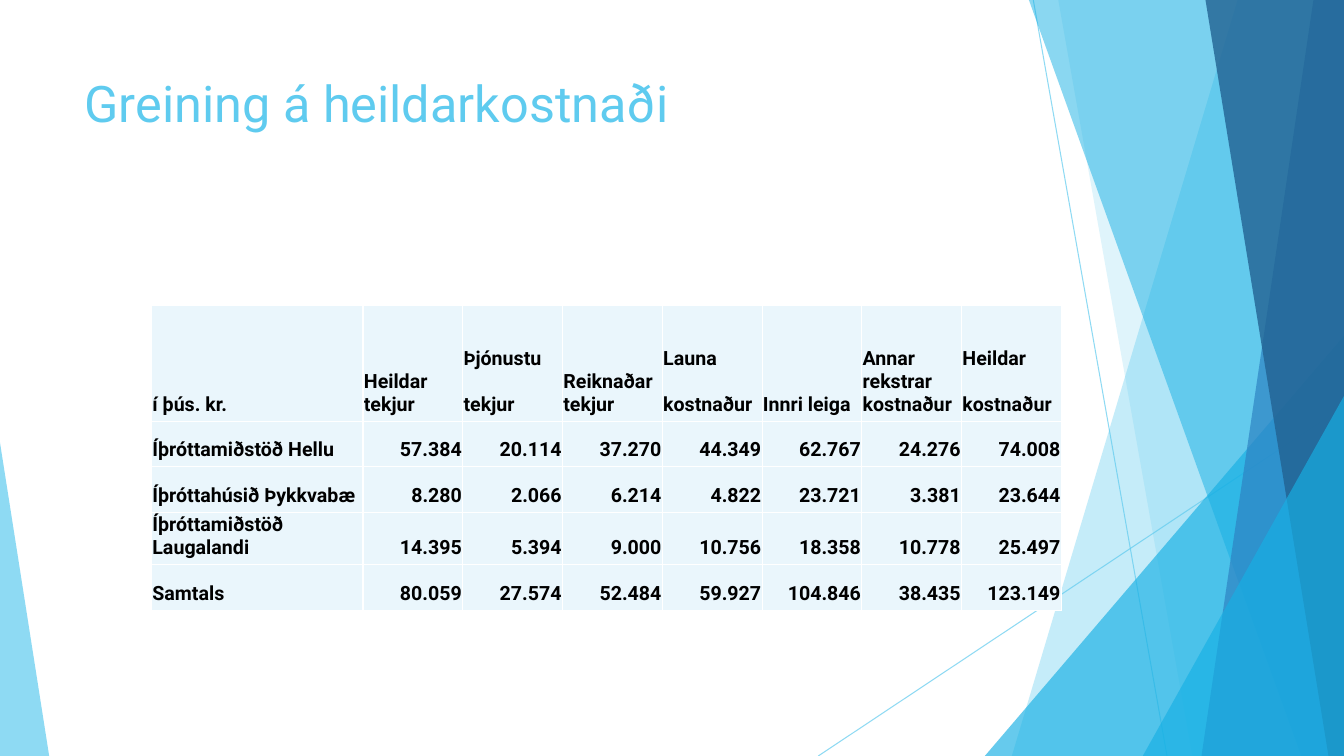
from collections import namedtuple
from dataclasses import dataclass

from pptx import Presentation
from pptx import oxml
from pptx import util as u
from pptx.dml.color import RGBColor
from pptx.enum import shapes, text
from pptx.oxml import ns

Cm, Pt = u.Cm, u.Pt
Box = namedtuple("Box", "left top width height")


@dataclass(frozen=True)
class Theme:
    font: str = "Roboto"
    sky: str = "5FCBEF"
    cyan: str = "17B0E4"
    blue: str = "2E83C3"
    navy: str = "226292"
    cell: str = "EAF6FC"
    border: str = "FFFFFF"
    ink: str = "000000"
    title_size: int = 36
    table_size: int = 14
    skipped_line: float = 16.4


THEME = Theme()

HEADINGS = ["í þús. kr.", "Heildar tekjur", "Þjónustu\ntekjur", "Reiknaðar tekjur",
            "Launa\nkostnaður", "Innri leiga", "Annar rekstrar kostnaður",
            "Heildar\nkostnaður"]
FACILITIES = [
    ["Íþróttamiðstöð Hellu", "57.384", "20.114", "37.270", "44.349", "62.767", "24.276", "74.008"],
    ["Íþróttahúsið Þykkvabæ", "8.280", "2.066", "6.214", "4.822", "23.721", "3.381", "23.644"],
    ["Íþróttamiðstöð Laugalandi", "14.395", "5.394", "9.000", "10.756", "18.358", "10.778", "25.497"],
    ["Samtals", "80.059", "27.574", "52.484", "59.927", "104.846", "38.435", "123.149"],
]


def element(tag, **attributes):
    made = oxml.parse_xml(f"<{tag} {ns.nsdecls('a')}/>")
    for name, value in attributes.items():
        made.set(name, str(value))
    return made


def set_opacity(drawn, percent):
    for colour in drawn._element.spPr.xpath(".//a:srgbClr"):
        colour.append(element("a:alpha", val=percent * 1000))


def paint(facet, colour, percent):
    facet.shadow.inherit = False
    facet.fill.solid()
    facet.fill.fore_color.rgb = RGBColor.from_string(colour)
    facet.line.fill.background()
    set_opacity(facet, percent)


def add_run(paragraph, words, size, colour, bold=False):
    run = paragraph.add_run()
    run.text = words
    run.font.name = THEME.font
    run.font.size = Pt(size)
    run.font.bold = bold
    run.font.color.rgb = RGBColor.from_string(colour)


def add_thin_line(slide, start, end):
    line = slide.shapes.add_connector(shapes.MSO_CONNECTOR.STRAIGHT, *start, *end)
    line.line.width = Pt(0.75)
    line.line.color.rgb = RGBColor.from_string(THEME.sky)
    set_opacity(line, 70)
    line._element.spPr.append(element("a:effectLst"))


def add_panel(slide, box, top_inset, bottom_inset):
    """Outline a full-height panel whose left edge slants; insets count from the right."""
    right, bottom = box.left + box.width, box.top + box.height
    builder = slide.shapes.build_freeform(right - Cm(top_inset), box.top)
    builder.add_line_segments([(right, box.top), (right, bottom),
                               (right - Cm(bottom_inset), bottom)])
    return builder.convert_to_shape()


def add_corner(slide, box, width, height, apex):
    """Add a right triangle in the bottom corner; apex 0 is left and 1 is right."""
    left = box.left + apex * (box.width - Cm(width))
    corner = slide.shapes.add_shape(shapes.MSO_SHAPE.ISOSCELES_TRIANGLE, left,
                                    box.top + box.height - Cm(height), Cm(width), Cm(height))
    corner.adjustments[0] = apex
    return corner


def add_facets(slide, box):
    right, bottom = box.left + box.width, box.top + box.height
    add_thin_line(slide, (right - Cm(7.83), box.top), (right - Cm(4.46), bottom))
    add_thin_line(slide, (right, box.top + Cm(10.24)), (right - Cm(13.25), bottom))
    for add_facet, measures, colour, percent in [
        (add_panel, (2.68, 8.37), THEME.sky, 36),
        (add_panel, (7.2, 3.82), THEME.sky, 20),
        (add_corner, (9.05, 10.59, 1), THEME.cyan, 66),
        (add_panel, (7.94, 1.08), THEME.cyan, 50),
        (add_panel, (0.77, 3.59), THEME.blue, 70),
        (add_panel, (3.49, 0.39), THEME.navy, 80),
        (add_corner, (5.07, 9.07, 1), THEME.cyan, 66),
        (add_corner, (1.24, 7.9, 0), THEME.sky, 70),
    ]:
        paint(add_facet(slide, box, *measures), colour, percent)


def place_title(slide, box, words):
    title = slide.shapes.title
    title.left, title.top, title.width, title.height = box
    title.text_frame.word_wrap = True
    title.text_frame.vertical_anchor = text.MSO_ANCHOR.TOP
    heading = title.text_frame.paragraphs[0]
    heading.alignment = text.PP_ALIGN.LEFT
    add_run(heading, words, THEME.title_size, THEME.sky)


def add_borders(cell):
    properties = cell._tc.get_or_add_tcPr()
    for side in ("a:lnL", "a:lnR", "a:lnT", "a:lnB"):
        border = element(side, w=Pt(1))
        fill = element("a:solidFill")
        fill.append(element("a:srgbClr", val=THEME.border))
        border.append(fill)
        properties.append(border)


def fill_cell(cell, words, alignment):
    """Write a cell; a line break in the words leaves one line's gap."""
    add_borders(cell)
    cell.fill.solid()
    cell.fill.fore_color.rgb = RGBColor.from_string(THEME.cell)
    cell.vertical_anchor = text.MSO_ANCHOR.BOTTOM
    cell.margin_left = cell.margin_right = cell.margin_top = Cm(0.02)
    cell.margin_bottom = Cm(0.13)
    for index, part in enumerate(words.split("\n")):
        frame = cell.text_frame
        paragraph = frame.add_paragraph() if index else frame.paragraphs[0]
        paragraph.alignment = alignment
        if index:
            paragraph.space_before = Pt(THEME.skipped_line)
        add_run(paragraph, part, THEME.table_size, THEME.ink, bold=True)


def add_cost_table(slide, box):
    rows = [HEADINGS] + FACILITIES
    costs = slide.shapes.add_table(len(rows), len(HEADINGS), *box).table
    costs.first_row = costs.horz_banding = False
    name_width, header_height = Cm(5.33), Cm(2.92)
    for index, column in enumerate(costs.columns):
        column.width = (box.width - name_width) // (len(HEADINGS) - 1) if index else name_width
    for index, row in enumerate(costs.rows):
        row.height = (box.height - header_height) // len(FACILITIES) if index else header_height
    for row_index, row in enumerate(rows):
        for column_index, words in enumerate(row):
            is_amount = row_index and column_index
            alignment = text.PP_ALIGN.RIGHT if is_amount else text.PP_ALIGN.LEFT
            fill_cell(costs.cell(row_index, column_index), words, alignment)


def main():
    deck = Presentation()
    deck.slide_width, deck.slide_height = Cm(33.87), Cm(19.05)
    slide = deck.slides.add_slide(deck.slide_layouts[5])
    add_facets(slide, Box(0, 0, deck.slide_width, deck.slide_height))
    place_title(slide, Box(Cm(1.88), Cm(1.7), Cm(23.88), Cm(3.66)), "Greining á heildarkostnaði")
    add_cost_table(slide, Box(Cm(3.82), Cm(7.7), Cm(22.93), Cm(7.5)))
    deck.save("out.pptx")


if __name__ == "__main__":
    main()
